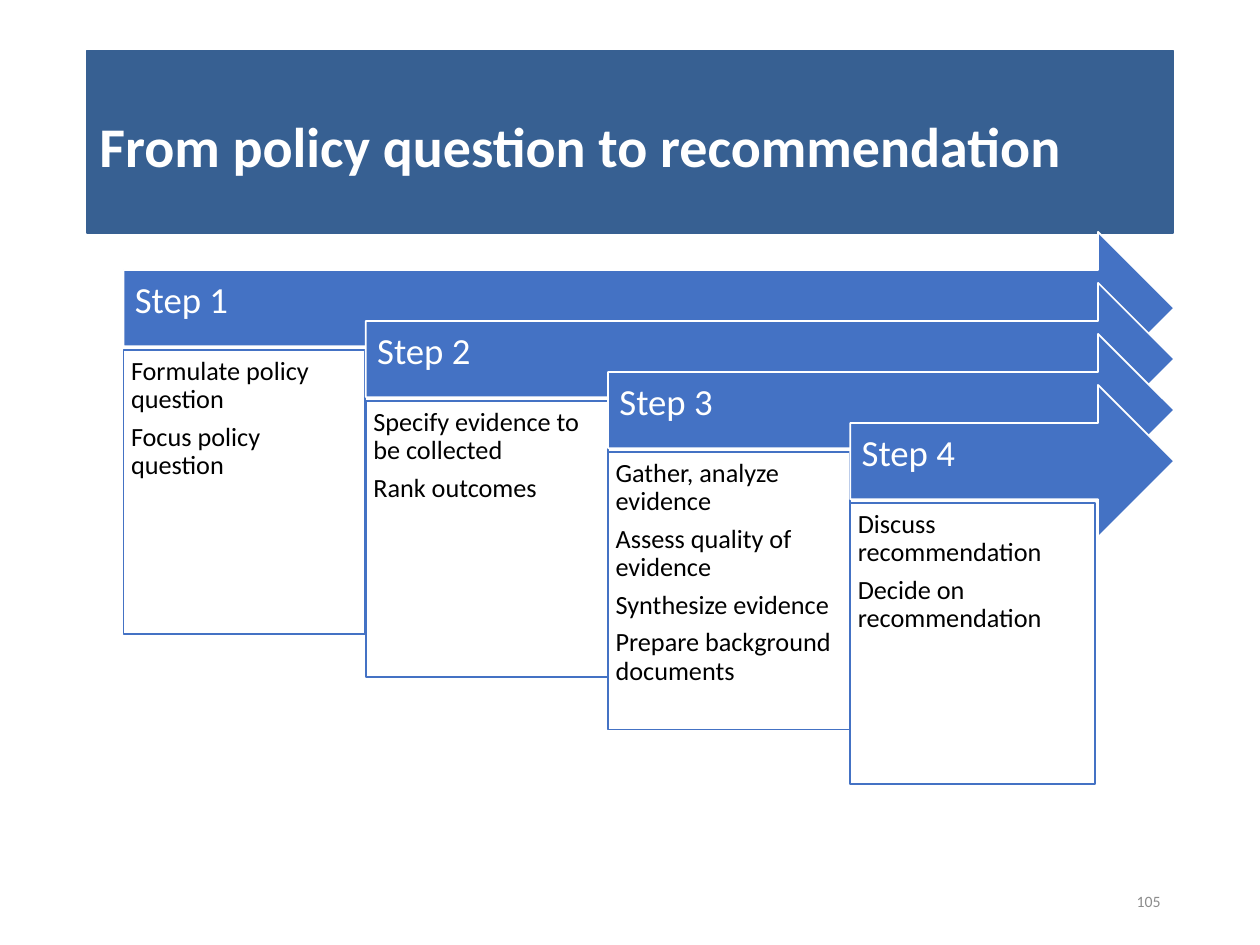
from dataclasses import dataclass

import pptx
import pptx.dml.color
import pptx.enum.shapes
import pptx.enum.text
import pptx.util
from pptx.util import Inches

SHAPE = pptx.enum.shapes.MSO_SHAPE
ANCHOR = pptx.enum.text.MSO_ANCHOR
ALIGN = pptx.enum.text.PP_ALIGN

COLORS = {
    "title": "376092",
    "step": "4472C4",
    "white": "FFFFFF",
    "text": "000000",
    "number": "8C8C8C",
}
FONT = "Calibri"

FIRST_LEFT = 0.98
FIRST_TOP = 1.84
STEP_RIGHT = 1.923
STEP_DOWN = 0.405
ARROW_TIP = 9.32
ARROW_HEIGHT = 1.21
BOX_DROP = 0.94


@dataclass
class Step:
    name: str
    tasks: list[str]
    box_width: float
    box_height: float


@dataclass
class TextStyle:
    size: float
    color: str
    anchor: ANCHOR
    insets: tuple[float, float, float, float] = (0.1, 0.05, 0.1, 0.05)
    align: ALIGN = ALIGN.LEFT
    spacing: float = 1.0
    after: float = 0
    bold: bool = False


STEPS = [
    Step("Step 1", ["Formulate policy question", "Focus policy question"], 1.92, 2.25),
    Step("Step 2", ["Specify evidence to be collected", "Rank outcomes"], 1.92, 2.19),
    Step("Step 3", ["Gather, analyze evidence", "Assess quality of evidence",
                    "Synthesize evidence", "Prepare background documents"], 1.92, 2.2),
    Step("Step 4", ["Discuss recommendation", "Decide on recommendation"], 1.94, 2.23),
]

TITLE = TextStyle(32, "white", ANCHOR.MIDDLE, spacing=1.1, bold=True)
NUMBER = TextStyle(9, "number", ANCHOR.MIDDLE, align=ALIGN.RIGHT)
STEP_NAME = TextStyle(21, "white", ANCHOR.MIDDLE, (0.09, 0.09, 0.28, 0.19), spacing=0.9)
TASK = TextStyle(15, "text", ANCHOR.TOP, (0.06,) * 4, spacing=0.9, after=5.25)


def rgb(name: str) -> pptx.dml.color.RGBColor:
    return pptx.dml.color.RGBColor.from_string(COLORS[name])


def write(sp, lines: list[str], style: TextStyle) -> None:
    tf = sp.text_frame
    tf.word_wrap = True
    tf.vertical_anchor = style.anchor
    tf.margin_left, tf.margin_top, tf.margin_right, tf.margin_bottom = map(Inches, style.insets)
    for i, line in enumerate(lines):
        p = tf.add_paragraph() if i else tf.paragraphs[0]
        p.text = line
        p.alignment = style.align
        p.line_spacing = style.spacing
        p.space_after = pptx.util.Pt(style.after)
        p.font.name = FONT
        p.font.size = pptx.util.Pt(style.size)
        p.font.bold = style.bold
        p.font.color.rgb = rgb(style.color)


def add_shape(s, kind: SHAPE, left: float, top: float, width: float, height: float,
              fill: str, line: str, line_width: float = 1):
    sp = s.shapes.add_shape(kind, Inches(left), Inches(top), Inches(width), Inches(height))
    sp.shadow.inherit = False
    sp.fill.solid()
    sp.fill.fore_color.rgb = rgb(fill)
    sp.line.color.rgb = rgb(line)
    sp.line.width = pptx.util.Pt(line_width)
    return sp


def add_step(s, index: int, step: Step) -> None:
    left = FIRST_LEFT + index * STEP_RIGHT
    top = FIRST_TOP + index * STEP_DOWN
    arrow = add_shape(s, SHAPE.RIGHT_ARROW, left, top, ARROW_TIP - left, ARROW_HEIGHT,
                      "step", "white")
    write(arrow, [step.name], STEP_NAME)
    box = add_shape(s, SHAPE.RECTANGLE, left, top + BOX_DROP, step.box_width, step.box_height,
                    "white", "step")
    write(box, step.tasks, TASK)


def main() -> None:
    prs = pptx.Presentation()
    prs.slide_width, prs.slide_height = Inches(10), Inches(7.5)
    s = prs.slides.add_slide(prs.slide_layouts[6])

    title = add_shape(s, SHAPE.RECTANGLE, 0.69, 0.4, 8.62, 1.45, "title", "title", 0.75)
    write(title, ["From policy question to recommendation"], TITLE)

    number = s.shapes.add_textbox(Inches(7.06), Inches(6.95), Inches(2.25), Inches(0.4))
    write(number, ["105"], NUMBER)

    for index, step in enumerate(STEPS):
        add_step(s, index, step)

    prs.save("out.pptx")


if __name__ == "__main__":
    main()
